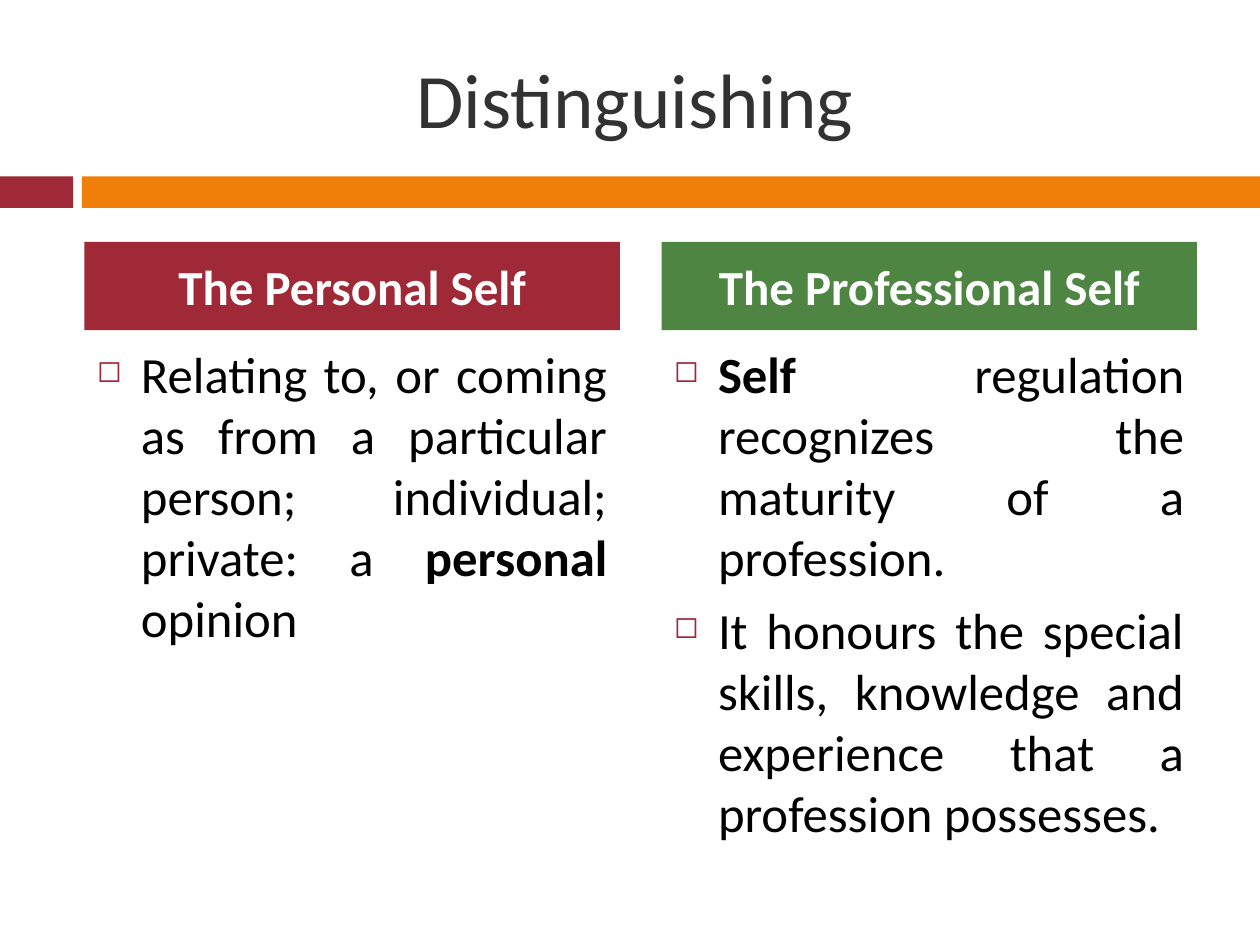
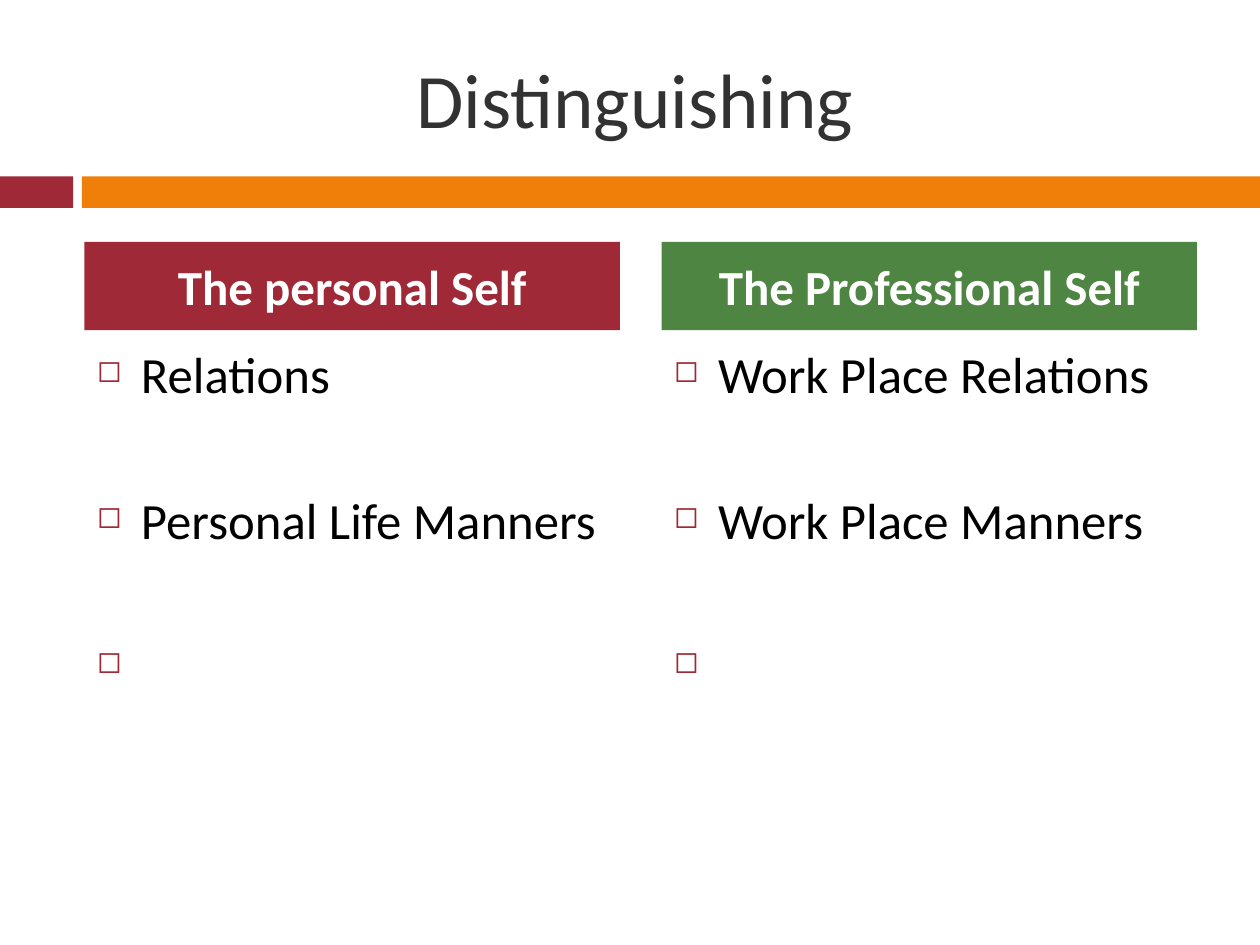
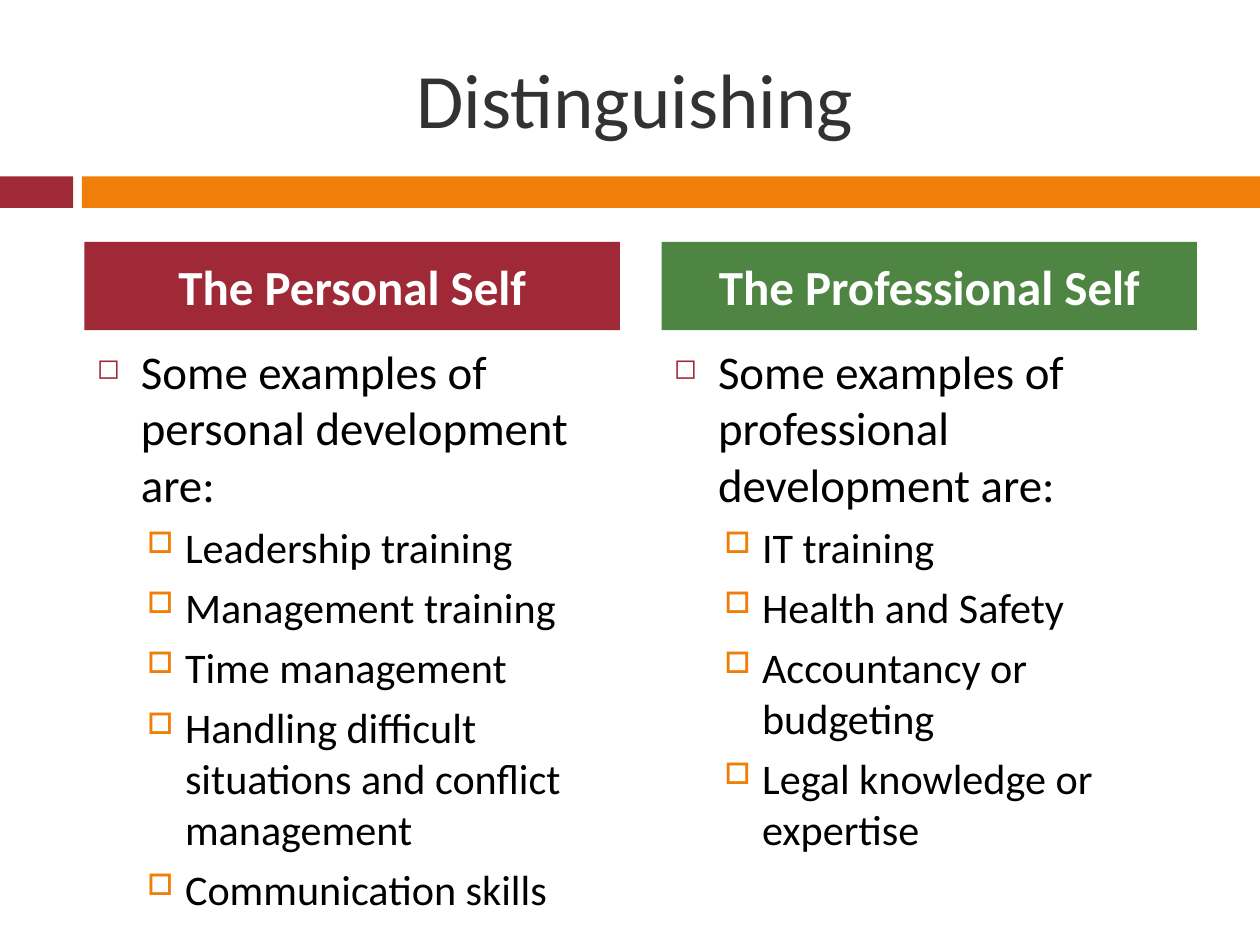
from dataclasses import dataclass

from lxml.etree import SubElement
from pptx import Presentation
from pptx.dml.color import RGBColor
from pptx.enum.shapes import MSO_SHAPE as Shape
from pptx.enum.text import MSO_ANCHOR as Anchor, PP_ALIGN as Align
from pptx.oxml.ns import qn
from pptx.util import Inches, Pt

# Shared look
FONT = "Calibri"
RED, ORANGE, GREEN = "9F2936", "F07F09", "4E8542"
WHITE, BLACK, GREY = "FFFFFF", "000000", "323232"
LEFT, WIDE, GAP = 0.67, 4.25, 0.33
HEADS = (RED, GREEN)


@dataclass
class Box:
    left: float
    top: float
    width: float
    height: float

    def place(self) -> list:
        return [Inches(n) for n in (self.left, self.top, self.width, self.height)]


@dataclass
class Level:
    mark: str
    color: str
    scale: int
    left: float
    hang: float
    before: float


@dataclass
class Item:
    text: str  # parts between asterisks are bold
    level: int = 0


@dataclass
class Column:
    head: str
    items: list[Item]


@dataclass
class Page:
    columns: list[Column]
    sizes: tuple[float, float] = (29, 24)
    align: Align = Align.JUSTIFY
    gap: float = 7  # space between main points


LEVELS = (
    Level("◻", RED, 60, 0.35, 0.35, 7),
    Level("□", ORANGE, 70, 0.7, 0.3, 5.5),
)
BANDS = ((Box(0, 1.4, 0.58, 0.25), RED), (Box(0.65, 1.4, 9.35, 0.25), ORANGE))
TITLE = Box(0.58, 0.3, 8.92, 0.95)


def rgb(code: str) -> RGBColor:
    return RGBColor.from_string(code)


def style(para, size: float, color: str, bold: bool | None = None) -> None:
    font = para.font
    font.name, font.size, font.bold = FONT, Pt(size), bold
    font.color.rgb = rgb(color)


def add_rect(slide, box: Box, color: str):
    rect = slide.shapes.add_shape(Shape.RECTANGLE, *box.place())
    rect.shadow.inherit = False
    rect.fill.solid()
    rect.fill.fore_color.rgb = rgb(color)
    rect.line.fill.background()
    return rect


def add_frame(slide, box: Box):
    frame = slide.shapes.add_textbox(*box.place()).text_frame
    frame.word_wrap = True
    return frame


def add_label(frame, text: str, size: float, color: str, bold: bool = False) -> None:
    frame.vertical_anchor = Anchor.MIDDLE
    para = frame.paragraphs[0]
    para.text = text
    para.alignment = Align.CENTER
    style(para, size, color, bold)


def add_mark(para, level: Level) -> None:
    props = para._p.get_or_add_pPr()
    props.set("marL", str(Inches(level.left)))
    props.set("indent", str(-Inches(level.hang)))
    tint = SubElement(props, qn("a:buClr"))
    SubElement(tint, qn("a:srgbClr"), val=level.color)
    SubElement(props, qn("a:buSzPct"), val=str(level.scale * 1000))
    SubElement(props, qn("a:buChar"), char=level.mark)


def add_items(frame, items: list[Item], page: Page) -> None:
    for row, item in enumerate(items):
        para = frame.paragraphs[0] if row == 0 else frame.add_paragraph()
        level = LEVELS[item.level]
        para.level = item.level
        para.alignment = page.align
        para.space_before = Pt(page.gap if row and not item.level else level.before)
        add_mark(para, level)
        style(para, page.sizes[item.level], BLACK)
        for part, text in enumerate(item.text.split("*")):
            if text:
                run = para.add_run()
                run.text = text
                if part % 2:
                    run.font.bold = True


def add_page(deck, page: Page) -> None:
    slide = deck.slides.add_slide(deck.slide_layouts[6])
    for box, color in BANDS:
        add_rect(slide, box, color)
    add_label(add_frame(slide, TITLE), "Distinguishing", 44, GREY)

    # Two columns, each with a head and its points
    for col, (column, color) in enumerate(zip(page.columns, HEADS)):
        left = LEFT + col * (WIDE + GAP)
        add_items(add_frame(slide, Box(left, 2.67, WIDE, 3.92)), column.items, page)
        head = add_rect(slide, Box(left, 1.92, WIDE, 0.7), color).text_frame
        head.word_wrap = True
        add_label(head, column.head, 28, WHITE, True)
        head.paragraphs[0].space_before = Pt(7)


def nest(lead: str, *subs: str) -> list[Item]:
    return [Item(lead)] + [Item(sub, 1) for sub in subs]


PAGES = (
    Page([
        Column("The Personal Self", [
            Item("Relating to, or coming as from a particular person; "
                 "individual; private: a *personal *opinion"),
        ]),
        Column("The Professional Self", [
            Item("*Self* regulation recognizes the maturity of a profession. "),
            Item("It honours the special skills, knowledge and experience "
                 "that a profession possesses."),
        ]),
    ]),
    Page([
        Column("The personal Self", [
            Item("Relations "), Item("Personal Life Manners"), Item(" "),
        ]),
        Column("The Professional Self", [
            Item("Work Place Relations "), Item("Work Place Manners"), Item(" "),
        ]),
    ], gap=48.5),
    Page([
        Column("The Personal Self", nest(
            "Some examples of personal development are:",
            "Leadership training",
            "Management training",
            "Time management",
            "Handling difficult situations and conflict management",
            "Communication skills",
        )),
        Column("The Professional Self", nest(
            "Some examples of professional development are:",
            "IT training",
            "Health and Safety",
            "Accountancy or budgeting",
            "Legal knowledge or expertise",
        )),
    ], sizes=(26.8, 24.1), align=Align.LEFT),
)


def main() -> None:
    deck = Presentation()
    deck.slide_width, deck.slide_height = Inches(10), Inches(7.5)
    for page in PAGES:
        add_page(deck, page)
    deck.save("out.pptx")


if __name__ == "__main__":
    main()
